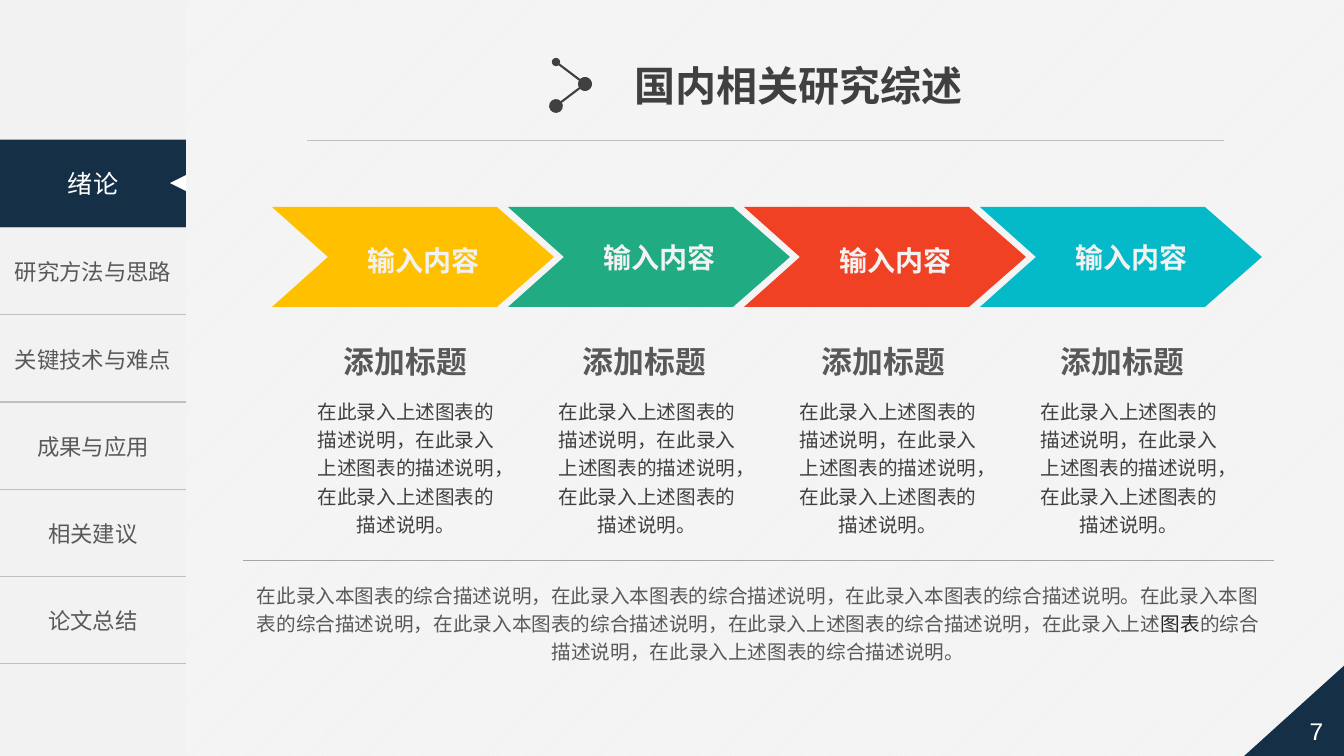
from lxml import etree
from pptx import Presentation
from pptx.dml.color import RGBColor
from pptx.enum.dml import MSO_PATTERN
from pptx.enum.lang import MSO_LANGUAGE_ID
from pptx.enum.shapes import MSO_CONNECTOR, MSO_SHAPE
from pptx.enum.text import MSO_ANCHOR, MSO_AUTO_SIZE, PP_ALIGN
from pptx.oxml.ns import qn
from pptx.util import Pt

PX = 9144000 / 1008
RECT = MSO_SHAPE.RECTANGLE
TRIANGLE = MSO_SHAPE.ISOSCELES_TRIANGLE
CORNER = MSO_SHAPE.RIGHT_TRIANGLE
PLATE = MSO_SHAPE.PENTAGON
STRAIGHT = MSO_CONNECTOR.STRAIGHT
HATCH = MSO_PATTERN.LIGHT_UPWARD_DIAGONAL
CHINESE = MSO_LANGUAGE_ID.SIMPLIFIED_CHINESE
LEFT, CENTER = PP_ALIGN.LEFT, PP_ALIGN.CENTER
TOP, MIDDLE = MSO_ANCHOR.TOP, MSO_ANCHOR.MIDDLE
FIXED = MSO_AUTO_SIZE.NONE

WHITE = RGBColor(0xFF, 0xFF, 0xFF)
PALE = RGBColor(0xF2, 0xF2, 0xF2)
NAVY = RGBColor(0x15, 0x2F, 0x47)
RULE = RGBColor(0xBF, 0xBF, 0xBF)
DIVIDE = RGBColor(0xA6, 0xA6, 0xA6)
GRAY = RGBColor(0x59, 0x59, 0x59)
DARK = RGBColor(0x40, 0x40, 0x40)
INK = RGBColor(0x26, 0x26, 0x26)
YELLOW = RGBColor(0xFF, 0xC0, 0x00)
GREEN = RGBColor(0x21, 0xAB, 0x82)
RED = RGBColor(0xF1, 0x41, 0x24)
CYAN = RGBColor(0x05, 0xBA, 0xC8)

NOTO, ARIAL, MONO = "Noto Sans CJK SC", "Arial", "Courier New"
PARTS = ["研究方法与思路", "关键技术与难点", "成果与应用", "相关建议", "论文总结"]
STEPS = [YELLOW, GREEN, RED, CYAN]
ARROW = [(0, 0), (225, 0), (282, 50), (225, 100), (0, 100), (56, 50)]
DETAIL = "在此录入上述图表的描述说明，" * 2 + "在此录入上述图表的描述说明。"
SUMMARY = [
    ("在此录入本图表的综合描述说明，在此录入本图表的综合描述说明，"
     "在此录入本图表的综合描述说明。在此录入本图表的综合描述说明，"
     "在此录入本图表的综合描述说明，在此录入上述图表的综合描述说明，"
     "在此录入上述", GRAY),
    ("图表", INK),
    ("的综合描述说明，在此录入上述图表的综合描述说明。", GRAY),
]


def emu(*sizes):
    return [round(size * PX) for size in sizes]


class Board:
    """Draws styled elements on the current slide, with lengths in px."""

    def __init__(self, deck):
        self.slide = deck.slides.add_slide(deck.slide_layouts[5])
        self.shapes = self.slide.shapes
        fill = self.slide.background.fill
        fill.patterned()
        fill.pattern = HATCH
        fill.fore_color.rgb = WHITE
        fill.back_color.rgb = PALE

    def label(self, frame, runs, size, font=NOTO, bold=False, align=CENTER, pitch=None):
        line = frame.paragraphs[0]
        line.alignment = align
        if pitch:
            line.line_spacing = Pt(pitch)
        for words, color in runs:
            run = line.add_run()
            run.text = words
            run.font.size = Pt(size)
            run.font.bold = bold
            run.font.language_id = CHINESE
            run.font.color.rgb = color
            run.font.name = font
            etree.SubElement(run.font._element, qn("a:ea"), typeface=NOTO)

    def frame(self, shape, anchor=MIDDLE, wrap=True, inset=(10, 5)):
        frame = shape.text_frame
        frame.auto_size = FIXED
        frame.word_wrap = wrap
        frame.vertical_anchor = anchor
        side, edge = emu(*inset)
        frame.margin_left = frame.margin_right = side
        frame.margin_top = frame.margin_bottom = edge
        return frame

    def title(self, box, words):
        shape = self.shapes.title
        shape.left, shape.top, shape.width, shape.height = emu(*box)
        frame = self.frame(shape, wrap=False)
        self.label(frame, [(words, DARK)], 29.3, ARIAL, True, LEFT)

    def text(self, box, runs, size, font=NOTO, bold=False, pitch=None,
             anchor=MIDDLE, wrap=True, inset=(10, 5)):
        shape = self.shapes.add_textbox(*emu(*box))
        frame = self.frame(shape, anchor, wrap, inset)
        self.label(frame, runs, size, font, bold, pitch=pitch)

    def paint(self, shape, color):
        shape.shadow.inherit = False
        shape.line.fill.background()
        if color is None:
            shape.fill.background()
        else:
            shape.fill.solid()
            shape.fill.fore_color.rgb = color

    def shape(self, kind, box, color=None, turn=0, flip=False):
        shape = self.shapes.add_shape(kind, *emu(*box))
        self.paint(shape, color)
        shape.rotation = turn
        if flip:
            shape._element.spPr.find(qn("a:xfrm")).set("flipH", "1")
        return shape

    def arrow(self, left, top, color):
        points = [(left + x, top + y) for x, y in ARROW]
        pen = self.shapes.build_freeform(*points[0], scale=PX)
        pen.add_line_segments(points[1:], close=True)
        self.paint(pen.convert_to_shape(), color)

    def line(self, start, end, color, width, dots=()):
        line = self.shapes.add_connector(STRAIGHT, *emu(*start, *end))
        line.line.color.rgb = color
        line.line.width = Pt(width)
        outline = line._element.spPr.find(qn("a:ln"))
        for tag, size in zip(("a:headEnd", "a:tailEnd"), dots):
            etree.SubElement(outline, qn(tag), type="oval", w=size, len=size)
        etree.SubElement(line._element.spPr, qn("a:effectLst"))

    def border(self, cell):
        props = cell._tc.get_or_add_tcPr()
        for tag in ("a:lnL", "a:lnR"):
            etree.SubElement(etree.SubElement(props, qn(tag), w="0"), qn("a:noFill"))
        for tag in ("a:lnT", "a:lnB"):
            edge = etree.SubElement(props, qn(tag), w=str(int(Pt(1))))
            fill = etree.SubElement(edge, qn("a:solidFill"))
            etree.SubElement(fill, qn("a:srgbClr"), val=str(RULE))

    def menu(self, box, parts):
        table = self.shapes.add_table(len(parts), 1, *emu(*box)).table
        table.first_row = table.horz_banding = False
        for row, part in enumerate(parts):
            cell = table.cell(row, 0)
            self.border(cell)
            cell.fill.background()
            cell.vertical_anchor = MIDDLE
            if part:
                self.label(cell.text_frame, [(part, GRAY)], 16)


def main():
    deck = Presentation()
    deck.slide_width, deck.slide_height = emu(1344, 756)
    board = Board(deck)

    board.shape(RECT, (0, 0, 186, 756), PALE)
    board.menu((0, 140, 186, 524), [""] + PARTS)
    active = board.shape(RECT, (0, 140, 186, 87), NAVY)
    board.label(board.frame(active), [("绪论", WHITE)], 18)
    board.shape(TRIANGLE, (170, 175, 16, 16), WHITE, turn=270)
    board.line((307, 140), (1224, 140), RULE, 0.5)
    board.shape(CORNER, (1243, 663, 104, 94), NAVY, flip=True)
    page = board.shape(PLATE, (1255, 703, 109, 55), flip=True)
    board.label(board.frame(page), [("7", WHITE)], 18, MONO)

    board.title((625, 56, 353, 59), "国内相关研究综述")
    board.line((556, 62), (585, 84), DARK, 1.5, ("med", "lg"))
    board.line((585, 84), (556, 106), DARK, 1.5, ("lg", "lg"))

    for step, color in enumerate(STEPS):
        left = 272 + 236 * step
        drop = 238 if step % 2 == 0 else 235
        board.arrow(left, 207, color)
        board.text((left + 32, drop, 240, 44), [("输入内容", PALE)], 20,
                   ARIAL, True, inset=(0, 0))
        board.text((333 + 239 * step, 338, 145, 47), [("添加标题", GRAY)], 22,
                   bold=True, wrap=False)
        board.text((302 + 241 * step, 390, 208, 152), [(DETAIL, DARK)], 14,
                   pitch=20.2, anchor=TOP)

    board.text((241, 574, 1034, 96), SUMMARY, 14, pitch=20.2, anchor=TOP)
    board.line((243, 560), (1274, 560), DIVIDE, 0.5)
    deck.save("out.pptx")


if __name__ == "__main__":
    main()
